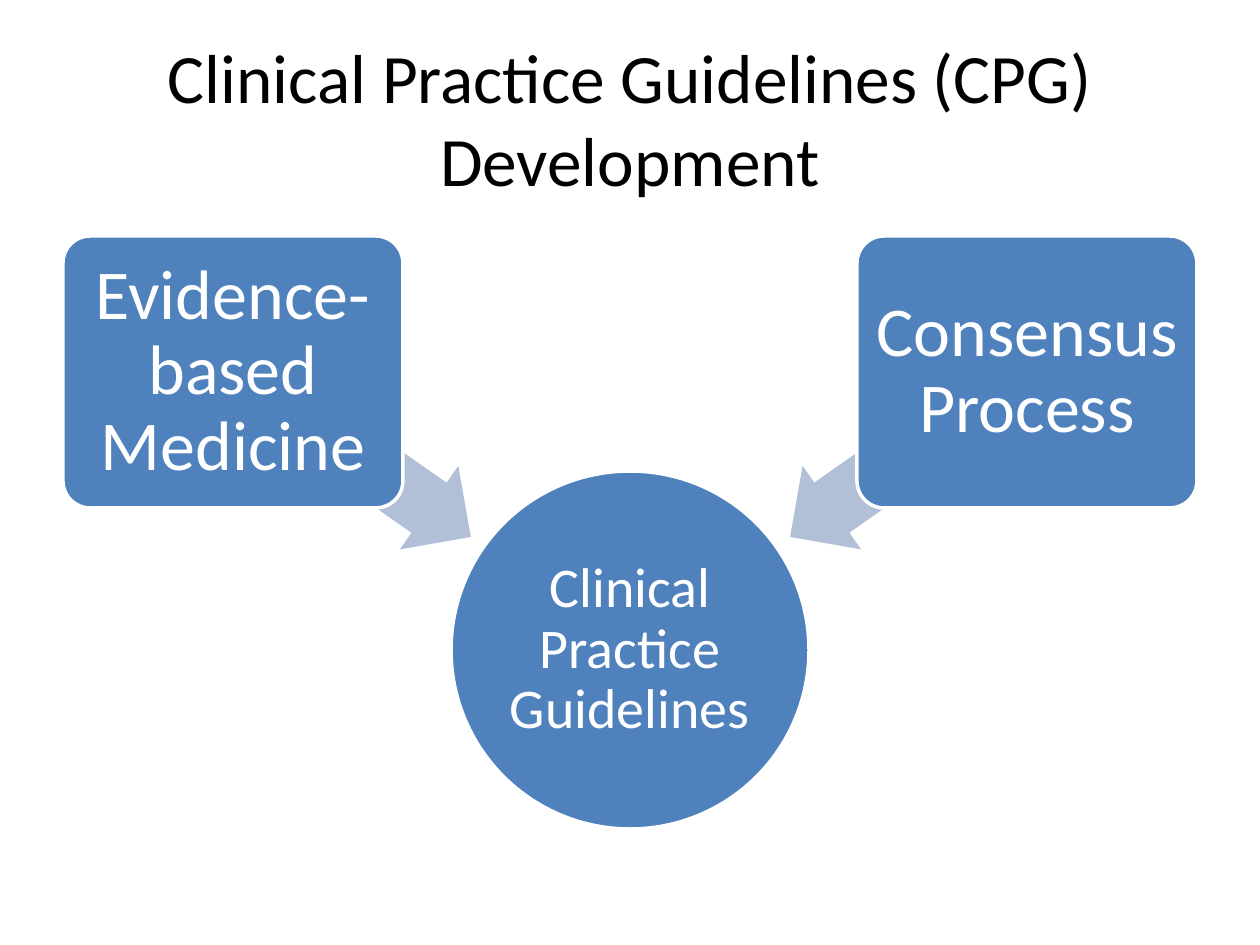
import pptx
import pptx.util
import pptx.dml.color
import pptx.enum.shapes
import pptx.enum.text

SCALE = 914400 / 126
WIDTH, HEIGHT = 1260, 945
COLORS = {"title": "000000", "node": "4F81BD", "arrow": "B1C0D7", "white": "FFFFFF"}
SHAPE = pptx.enum.shapes.MSO_SHAPE


def add_shape(kind, box, color, outlined):
    sp = s.shapes.add_shape(kind, *[round(n * SCALE) for n in box])
    sp.shadow.inherit = False
    sp.fill.solid()
    sp.fill.fore_color.rgb = pptx.dml.color.RGBColor.from_string(COLORS[color])
    if outlined:
        sp.line.color.rgb = pptx.dml.color.RGBColor.from_string(COLORS["white"])
        sp.line.width = pptx.util.Pt(2)
    else:
        sp.line.fill.background()
    return sp


def write_text(sp, lines, size, color, spacing, margin):
    tf = sp.text_frame
    tf.word_wrap = True
    tf.vertical_anchor = pptx.enum.text.MSO_ANCHOR.MIDDLE
    tf.margin_left = tf.margin_right = round(margin * SCALE)
    tf.margin_top = tf.margin_bottom = round(margin * SCALE)
    for i, line in enumerate(lines):
        p = tf.add_paragraph() if i else tf.paragraphs[0]
        p.alignment = pptx.enum.text.PP_ALIGN.CENTER
        p.line_spacing = spacing
        r = p.add_run()
        r.text = line
        r.font.name = "Calibri"
        r.font.size = pptx.util.Pt(size)
        r.font.color.rgb = pptx.dml.color.RGBColor.from_string(COLORS[color])


prs = pptx.Presentation()
prs.slide_width = round(WIDTH * SCALE)
prs.slide_height = round(HEIGHT * SCALE)
s = prs.slides.add_slide(prs.slide_layouts[6])

title = s.shapes.add_textbox(*[round(n * SCALE) for n in (63, 38, 1134, 158)])
write_text(title, ["Clinical Practice Guidelines (CPG) Development"], 39.6, "title", 1.0, 6)

circle = add_shape(SHAPE.OVAL, (451, 471, 358, 358), "node", True)
write_text(circle, ["Clinical Practice Guidelines"], 32, "white", 0.9, 2)

inputs = [
    (63, 208, 215, ["Evidence-", "based Medicine"]),
    (857, 764, 325, ["Consensus Process"]),
]
for box_left, arrow_left, angle, lines in inputs:
    arrow = add_shape(SHAPE.LEFT_ARROW, (arrow_left, 403, 289, 102), "arrow", False)
    arrow.adjustments[0] = 0.6
    arrow.adjustments[1] = 0.5
    arrow.rotation = angle
    box = add_shape(SHAPE.ROUNDED_RECTANGLE, (box_left, 236, 340, 272), "node", True)
    box.adjustments[0] = 0.1
    write_text(box, lines, 40, "white", 0.9, 4)

prs.save("out.pptx")
